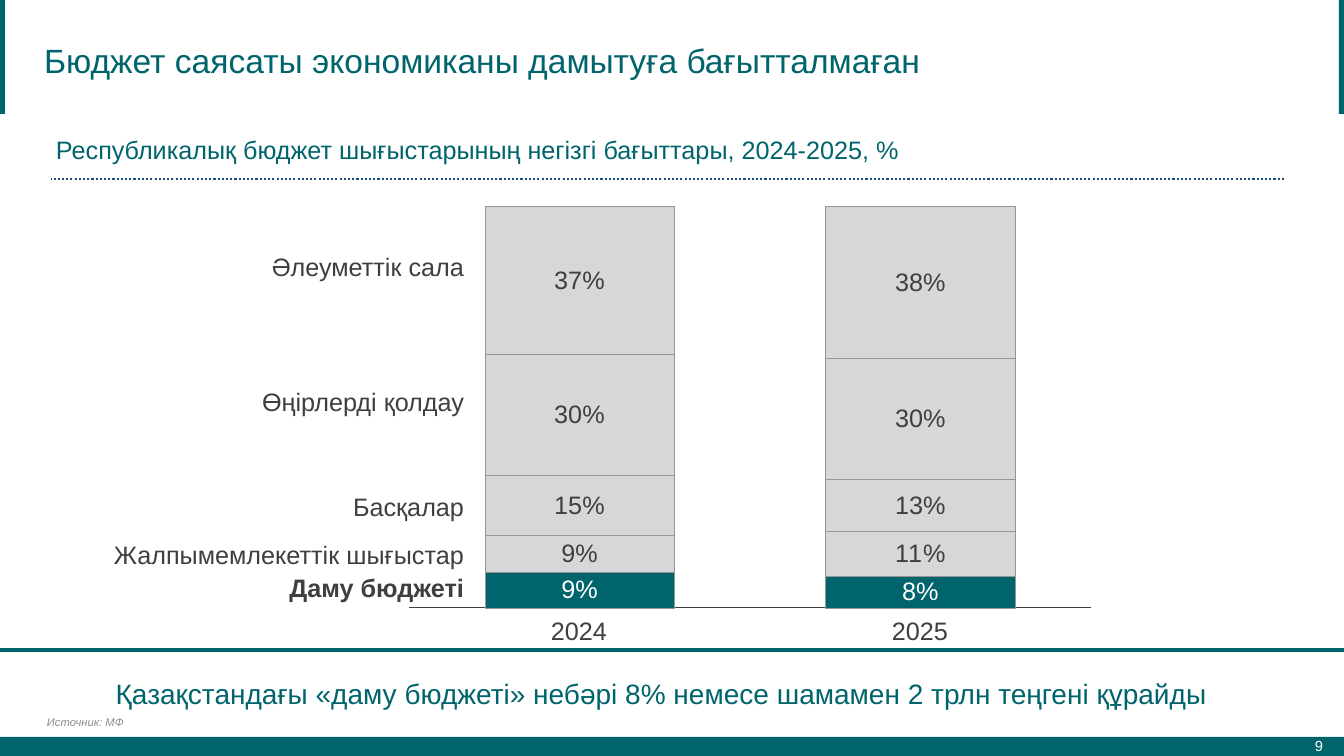
"""Build a slide on the structure of republican budget spending, 2024-2025."""
from pptx import Presentation
from pptx.chart.data import CategoryChartData
from pptx.dml.color import RGBColor
from pptx.enum.chart import XL_CHART_TYPE, XL_TICK_LABEL_POSITION, XL_TICK_MARK
from pptx.enum.dml import MSO_LINE
from pptx.enum.shapes import MSO_CONNECTOR, MSO_SHAPE
from pptx.enum.text import MSO_ANCHOR, PP_ALIGN
from pptx.oxml.xmlchemy import OxmlElement
from pptx.util import Pt

LEFT, CENTER, RIGHT = PP_ALIGN.LEFT, PP_ALIGN.CENTER, PP_ALIGN.RIGHT
MIDDLE, BOTTOM = MSO_ANCHOR.MIDDLE, MSO_ANCHOR.BOTTOM
STACKED = XL_CHART_TYPE.COLUMN_STACKED
NO_TICKS, NO_LABELS = XL_TICK_MARK.NONE, XL_TICK_LABEL_POSITION.NONE
STRAIGHT, RECTANGLE = MSO_CONNECTOR.STRAIGHT, MSO_SHAPE.RECTANGLE
DOTTED, SOLID = MSO_LINE.ROUND_DOT, MSO_LINE.SOLID
FONT = "Arial"
TEAL, DARK, GRAY, WHITE = "00646C", "3F3F3F", "D6D7D9", "FFFFFF"
SCALE = 914400 / 100.8
color = RGBColor.from_string


def px(*lengths):
    """Turn pixel lengths into EMU."""
    return [round(length * SCALE) for length in lengths]


def write(text, area, box=None, size=18, fill=TEAL, align=LEFT, anchor=MIDDLE,
          bold=False, italic=False, inset=0):
    """Put one formatted paragraph into a given shape or a new text box."""
    place = px(*area)
    box = box or slide.shapes.add_textbox(*place)
    box.left, box.top, box.width, box.height = place
    frame = box.text_frame
    frame.word_wrap = True
    frame.vertical_anchor = anchor
    frame.margin_left, frame.margin_right = px(inset, inset)
    frame.margin_top, frame.margin_bottom = px(inset // 2, inset // 2)
    para = frame.paragraphs[0]
    para.alignment = align
    span = para.add_run()
    span.text = text
    font = span.font
    font.name, font.size, font.bold, font.italic = FONT, Pt(size), bold, italic
    font.color.rgb = color(fill)


deck = Presentation()
deck.slide_width, deck.slide_height = px(1344, 756)
slide = deck.slides.add_slide(deck.slide_layouts[5])

for area in [(0, 737, 1344, 19), (0, 0, 5, 114), (1339, 0, 5, 114)]:
    bar = slide.shapes.add_shape(RECTANGLE, *px(*area))
    bar.shadow.inherit = False
    bar.fill.solid()
    bar.fill.fore_color.rgb = color(TEAL)
    bar.line.fill.background()

write("Бюджет саясаты экономиканы дамытуға бағытталмаған", (34, 21, 1250, 78),
      box=slide.shapes.title, size=24, inset=10)
write("9", (1202, 726, 129, 40), size=10.5, fill=WHITE, align=RIGHT, inset=8)
write("Источник: МФ", (47, 716, 690, 13), size=8, fill="8C8C8C", anchor=BOTTOM,
      italic=True)
write("Республикалық бюджет шығыстарының негізгі бағыттары, 2024-2025, %",
      (46, 128, 932, 42), anchor=BOTTOM, inset=10)

spending = [
    ("Даму бюджеті", 588, (9, 8)),
    ("Жалпымемлекеттік шығыстар", 555, (9, 11)),
    ("Басқалар", 507, (15, 13)),
    ("Өңірлерді қолдау", 402, (30, 30)),
    ("Әлеуметтік сала", 267, (37, 38)),
]
years = [("2024", 579), ("2025", 920)]

data = CategoryChartData(number_format='0"%"')
data.categories = [year for year, middle in years]
for name, middle, shares in spending:
    data.add_series(name, shares)
chart = slide.shapes.add_chart(STACKED, *px(400, 163, 700, 488), data).chart
chart.has_title = False
chart.has_legend = False
chart.font.name, chart.font.size = FONT, Pt(18)
chart.font.color.rgb = color(DARK)

category_axis, value_axis = chart.category_axis, chart.value_axis
category_axis.tick_label_position = NO_LABELS
category_axis.major_tick_mark = category_axis.minor_tick_mark = NO_TICKS
category_axis.format.line.width = Pt(0.75)
category_axis.format.line.color.rgb = color(DARK)
value_axis.minimum_scale, value_axis.maximum_scale = 0, 100
value_axis.has_major_gridlines = False
value_axis.visible = False

plot = chart.plots[0]
plot.gap_width, plot.overlap = 80, 100
plot.vary_by_categories = False
for index, series in enumerate(plot.series):
    series.format.fill.solid()
    series.format.fill.fore_color.rgb = color(GRAY if index else TEAL)
    series.format.line.width = Pt(0.25)
    series.format.line.color.rgb = color("969696")
    labels = series.data_labels
    labels.show_value = True
    labels.number_format, labels.number_format_is_linked = '0"%"', False
    labels.font.name, labels.font.size = FONT, Pt(18)
    labels.font.color.rgb = color(DARK if index else WHITE)

plot_area = chart._chartSpace.chart.plotArea
for old_layout in plot_area.findall("{*}layout"):
    plot_area.remove(old_layout)
layout, manual = OxmlElement("c:layout"), OxmlElement("c:manualLayout")
for tag, value in [("layoutTarget", "inner"), ("xMode", "edge"), ("yMode", "edge"),
                   ("x", "0.013"), ("y", "0.088"), ("w", "0.974"), ("h", "0.824")]:
    setting = OxmlElement(f"c:{tag}")
    setting.set("val", value)
    manual.append(setting)
layout.append(manual)
plot_area.insert(0, layout)

for year, middle in years:
    write(year, (middle - 40, 617, 80, 27), fill=DARK, align=CENTER)
for name, middle, shares in spending:
    write(name, (64, middle - 14, 400, 27), fill=DARK, align=RIGHT,
          bold=name == spending[0][0])

for start, end, top, width, stroke, dash in [
        (1284, 51, 179, 1.5, "1F4E79", DOTTED), (0, 1344, 650, 3, TEAL, SOLID)]:
    rule = slide.shapes.add_connector(STRAIGHT, *px(start, top, end, top))
    rule.line.width = Pt(width)
    rule.line.color.rgb = color(stroke)
    rule.line.dash_style = dash
    rule._element.spPr.append(OxmlElement("a:effectLst"))

write("Қазақстандағы «даму бюджеті» небәрі 8% немесе шамамен 2 трлн теңгені құрайды",
      (0, 677, 1323, 33), size=20, align=CENTER, inset=10)

deck.save("out.pptx")
